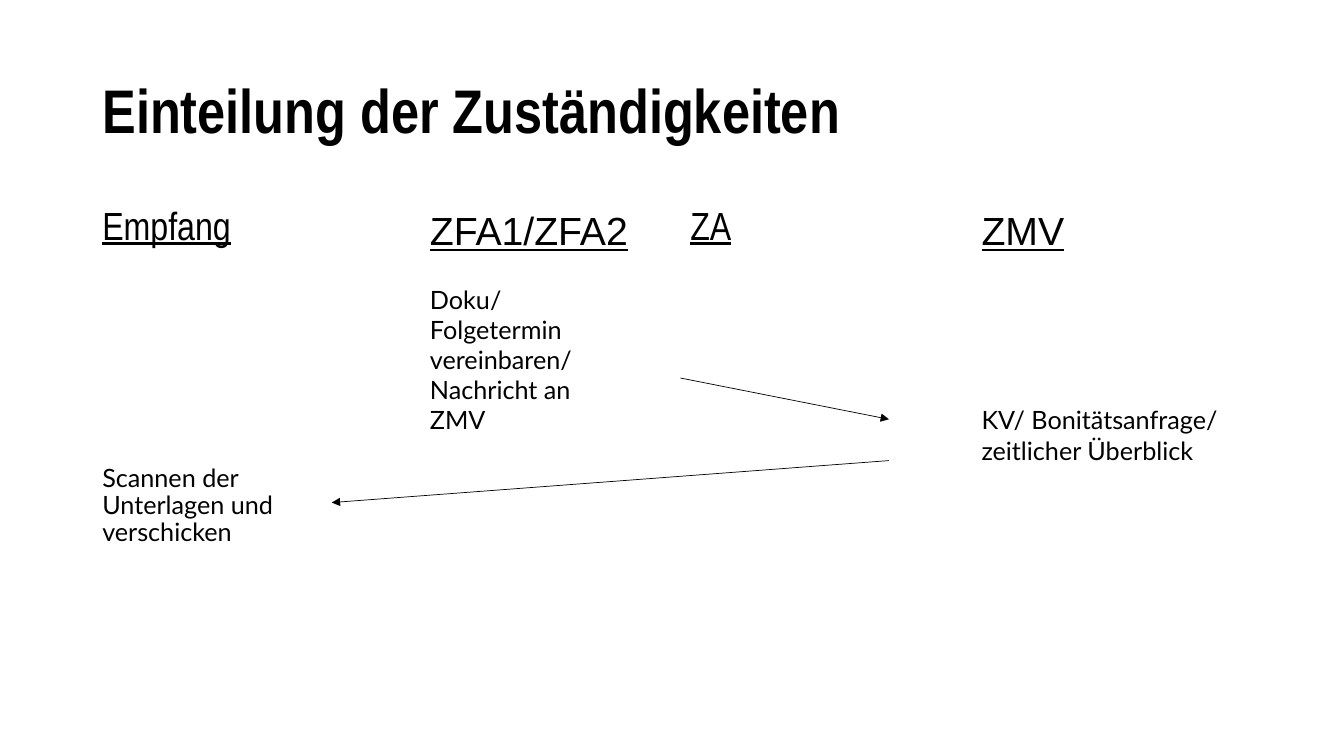
import dataclasses

import pptx
import pptx.dml.color
import pptx.enum.shapes
import pptx.enum.text
import pptx.oxml
import pptx.oxml.ns
import pptx.util

Pt = pptx.util.Pt


@dataclasses.dataclass(frozen=True)
class Theme:
    ink: pptx.dml.color.RGBColor = pptx.dml.color.RGBColor(0, 0, 0)
    narrow_font: str = "Arial Narrow"
    wide_font: str = "Arial"
    task_font: str = "Lato"
    title_size: float = 44
    role_size: float = 28
    task_size: float = 18
    tight: float = 0.9
    arrow_width: float = 0.5


THEME = Theme()


def style(paragraph, font_name, size, bold=False, underline=False):
    for run in paragraph.runs:
        font = run.font
        font.name, font.size = font_name, Pt(size)
        font.bold, font.underline = bold, underline
        font.color.rgb = THEME.ink


def add_title(slide, box, wording):
    title = slide.shapes.title
    title.left, title.top, title.width, title.height = (Pt(v) for v in box)
    frame = title.text_frame
    frame.text = wording
    frame.auto_size = pptx.enum.text.MSO_AUTO_SIZE.NONE
    frame.vertical_anchor = pptx.enum.text.MSO_ANCHOR.MIDDLE
    heading = frame.paragraphs[0]
    heading.alignment = pptx.enum.text.PP_ALIGN.LEFT
    heading.line_spacing = THEME.tight
    style(heading, THEME.narrow_font, THEME.title_size, bold=True)


def add_text_frame(slide, box):
    frame = slide.shapes.add_textbox(*(Pt(v) for v in box)).text_frame
    frame.word_wrap = True
    return frame


def add_role(slide, box, role, font_name, spacing, task=None, gap=0):
    """Underlined role name, with its task set a gap below it."""
    frame = add_text_frame(slide, box)
    frame.text = role
    heading = frame.paragraphs[0]
    heading.line_spacing = spacing
    style(heading, font_name, THEME.role_size, underline=True)
    if task:
        duty = frame.add_paragraph()
        duty.text = task
        duty.space_before = Pt(gap)
        style(duty, THEME.task_font, THEME.task_size)


def add_task(slide, box, task):
    frame = add_text_frame(slide, box)
    frame.text = task
    duty = frame.paragraphs[0]
    duty.line_spacing = THEME.tight
    style(duty, THEME.task_font, THEME.task_size)


def add_handover(slide, start, end):
    arrow = slide.shapes.add_connector(
        pptx.enum.shapes.MSO_CONNECTOR.STRAIGHT, *(Pt(v) for v in start + end))
    arrow.line.color.rgb = THEME.ink
    arrow.line.width = Pt(THEME.arrow_width)
    head = pptx.oxml.parse_xml(
        f'<a:tailEnd {pptx.oxml.ns.nsdecls("a")} type="triangle"/>')
    arrow.line._get_or_add_ln().append(head)
    arrow._element.spPr.append(
        pptx.oxml.parse_xml(f'<a:effectLst {pptx.oxml.ns.nsdecls("a")}/>'))


def add_responsibilities(slide, box):
    left, top, width, height = box
    blank_line = 1.2 * THEME.task_size

    # Roles with their tasks
    add_role(slide, (left, top, 200, 180), "Empfang",
             THEME.narrow_font, THEME.tight)
    add_role(slide, (left + 234, top, 157, height), "ZFA1/ZFA2",
             THEME.wide_font, 1.0,
             "Doku/ Folgetermin vereinbaren/ Nachricht an ZMV", blank_line)
    add_role(slide, (left + 420, top, 208, height), "ZA",
             THEME.narrow_font, THEME.tight)
    add_role(slide, (left + 628, top, width - 628, 216), "ZMV",
             THEME.wide_font, 1.0,
             "KV/ Bonitätsanfrage/ zeitlicher Überblick", 5 * blank_line)
    add_task(slide, (left, top + 185, 200, height - 185),
             "Scannen der Unterlagen und verschicken")

    # Handovers from ZFA to ZMV and from ZMV to Empfang
    add_handover(slide, (left + 420, top + 126), (left + 569, top + 155.5))
    add_handover(slide, (left + 569, top + 185), (left + 171, top + 215))


def main():
    deck = pptx.Presentation()
    deck.slide_width, deck.slide_height = Pt(960), Pt(540)
    slide = deck.slides.add_slide(deck.slide_layouts[5])
    add_title(slide, (66, 29, 828, 104), "Einteilung der Zuständigkeiten")
    add_responsibilities(slide, (66, 144, 821, 343))
    deck.save("out.pptx")


if __name__ == "__main__":
    main()
